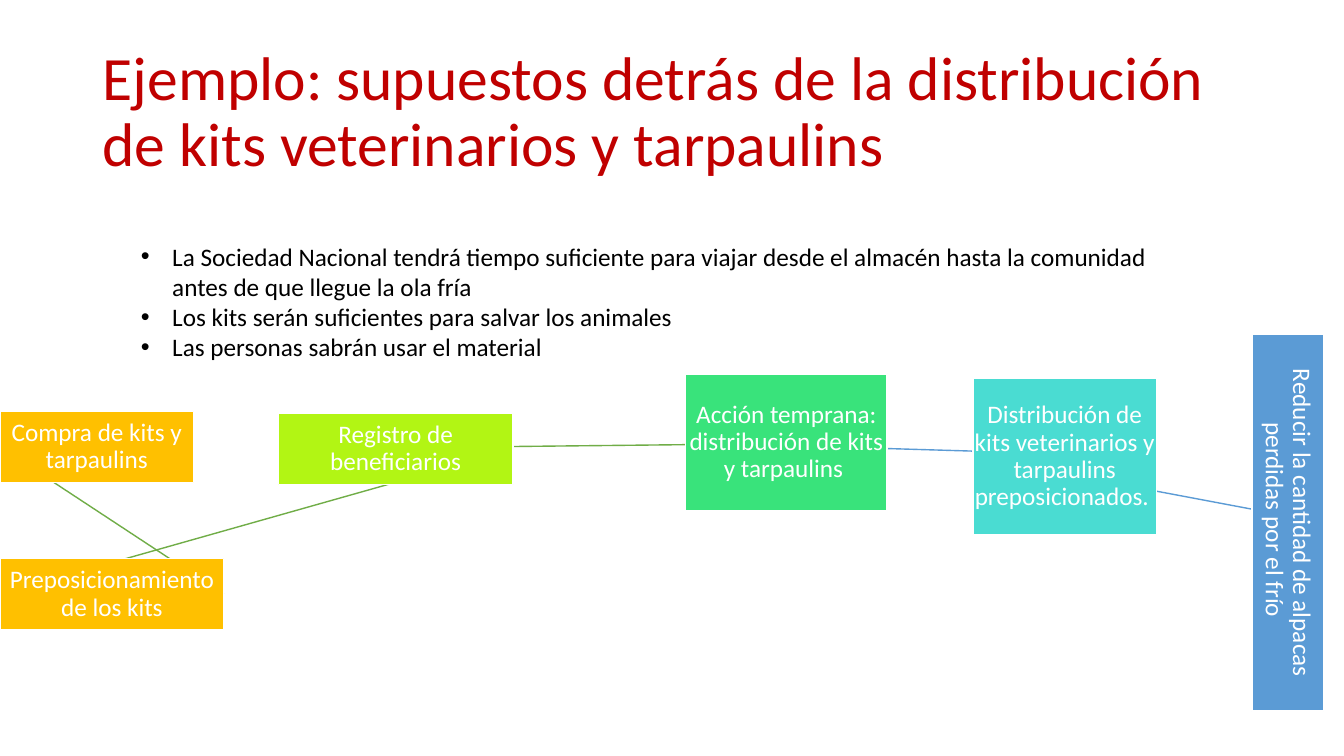
from dataclasses import dataclass

from lxml.etree import SubElement
from pptx import Presentation
from pptx.dml.color import RGBColor
from pptx.enum.shapes import MSO_CONNECTOR, MSO_SHAPE
from pptx.enum.text import MSO_ANCHOR, PP_ALIGN
from pptx.oxml.ns import qn
from pptx.util import Emu, Pt

FONT = "Calibri"
GREEN, BLUE, WHITE, AMBER = "70AD47", "5B9BD5", "FFFFFF", "FFC000"
TOP, LEFT, RIGHT = 0, 1, 3


def px(value: int) -> Emu:
    """Convert px to EMU, at 100 px to the inch."""
    return Emu(value * 9144)


def colour(hex_code: str) -> RGBColor:
    return RGBColor.from_string(hex_code)


@dataclass(frozen=True)
class Step:
    text: str
    left: int
    top: int
    width: int
    height: int
    fill: str
    rotation: int = 0


@dataclass(frozen=True)
class Link:
    """A line from one step back to the step before it."""
    start: str
    end: str
    line: str


TITLE = "Ejemplo: supuestos detrás de la distribución de kits veterinarios y tarpaulins"
ASSUMPTIONS = [
    "La Sociedad Nacional tendrá tiempo suficiente para viajar desde el almacén "
    "hasta la comunidad antes de que llegue la ola fría",
    "Los kits serán suficientes para salvar los animales",
    "Las personas sabrán usar el material",
]
STEPS = {
    "goal": Step("Reducir la cantidad de alpacas perdidas por el frío ",
                 1090, 483, 374, 71, BLUE, 90),
    "distribution": Step("Distribución de kits veterinarios y tarpaulins preposicionados. ",
                         965, 375, 182, 156, "4ADCD2"),
    "action": Step("Acción temprana: distribución de kits y tarpaulins ",
                   680, 371, 200, 136, "39E37B"),
    "registration": Step("Registro de beneficiarios", 276, 410, 233, 71, "B2F514"),
    "prepositioning": Step("Preposicionamiento de los kits", 0, 554, 222, 71, AMBER),
    "purchase": Step("Compra de kits y tarpaulins", 0, 408, 192, 71, AMBER),
}
LINKS = [
    Link("prepositioning", "purchase", GREEN),
    Link("registration", "prepositioning", GREEN),
    Link("action", "registration", GREEN),
    Link("distribution", "action", BLUE),
    Link("goal", "distribution", BLUE),
]


def add_span(para, text: str, size: int, hex_code: str) -> None:
    span = para.add_run()
    span.text = text
    span.font.name = FONT
    span.font.size = Pt(size)
    span.font.color.rgb = colour(hex_code)


def add_text_box(page, left: int, top: int, width: int, height: int):
    """Add a wrapping text box and return its text frame."""
    box = page.shapes.add_textbox(px(left), px(top), px(width), px(height))
    box.text_frame.word_wrap = True
    return box.text_frame


def add_title(page) -> None:
    frame = add_text_box(page, 92, 40, 1150, 145)
    frame.vertical_anchor = MSO_ANCHOR.MIDDLE
    para = frame.paragraphs[0]
    para.line_spacing = 0.9
    add_span(para, TITLE, 44, "C00000")


def add_assumptions(page) -> None:
    frame = add_text_box(page, 130, 234, 1059, 162)
    for index, text in enumerate(ASSUMPTIONS):
        para = frame.add_paragraph() if index else frame.paragraphs[0]
        properties = para._p.get_or_add_pPr()
        properties.set("marL", str(px(31)))
        properties.set("indent", str(px(-31)))
        SubElement(properties, qn("a:buFont"), typeface="Arial")
        SubElement(properties, qn("a:buChar"), char="•")
        add_span(para, text, 18, "000000")


def add_line(page, hex_code: str):
    connector = page.shapes.add_connector(MSO_CONNECTOR.STRAIGHT, 0, 0, 0, 0)
    connector.line.color.rgb = colour(hex_code)
    connector.line.width = Pt(1)
    SubElement(connector._element.spPr, qn("a:effectLst"))
    return connector


def add_step(page, step: Step):
    box = page.shapes.add_shape(MSO_SHAPE.RECTANGLE, px(step.left), px(step.top),
                                px(step.width), px(step.height))
    box.rotation = step.rotation
    box.shadow.inherit = False
    box.fill.solid()
    box.fill.fore_color.rgb = colour(step.fill)
    box.line.color.rgb = colour(WHITE)
    box.line.width = Pt(1)
    frame = box.text_frame
    frame.word_wrap = True
    frame.vertical_anchor = MSO_ANCHOR.MIDDLE
    frame.margin_left = frame.margin_right = px(1)
    frame.margin_top = frame.margin_bottom = px(1)
    para = frame.paragraphs[0]
    para.alignment = PP_ALIGN.CENTER
    para.line_spacing = 0.9
    add_span(para, step.text, 18, WHITE)
    return box


def join(connector, start, end) -> None:
    """Run the line from the right of start to the left of end."""
    connector.begin_connect(start, TOP if start.rotation else RIGHT)
    if start.rotation:  # a quarter turn brings the top side to the right
        connector.begin_x = start.left + (start.width + start.height) // 2
        connector.begin_y = start.top + start.height // 2
    connector.end_connect(end, LEFT)


def main() -> None:
    deck = Presentation()
    deck.slide_width, deck.slide_height = px(1333), px(750)
    page = deck.slides.add_slide(deck.slide_layouts[6])
    add_title(page)
    lines = [add_line(page, link.line) for link in LINKS]  # behind the boxes
    boxes = {name: add_step(page, step) for name, step in STEPS.items()}
    for line, link in zip(lines, LINKS):
        join(line, boxes[link.start], boxes[link.end])
    add_assumptions(page)
    deck.save("out.pptx")


if __name__ == "__main__":
    main()
